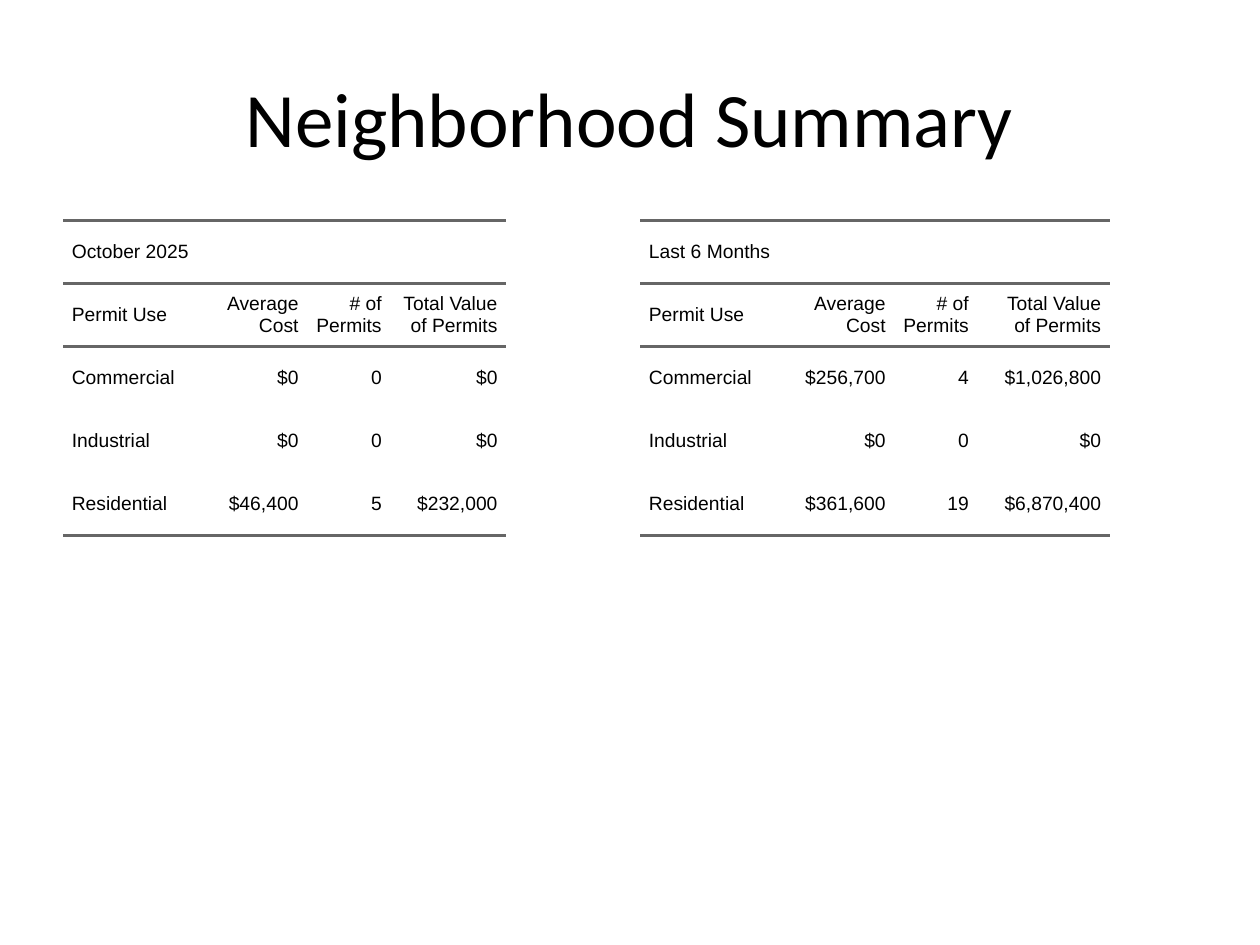
from dataclasses import dataclass
from typing import Any

from lxml import etree
from pptx import Presentation
from pptx.dml.color import RGBColor
from pptx.enum.text import MSO_ANCHOR, PP_ALIGN
from pptx.oxml.ns import qn
from pptx.util import Pt

LEFT, MID, RIGHT = PP_ALIGN.LEFT, PP_ALIGN.CENTER, PP_ALIGN.RIGHT
CENTER = MSO_ANCHOR.MIDDLE
BLACK = RGBColor(0, 0, 0)
GRAY = RGBColor(0x66, 0x66, 0x66)
PLAIN = "{2D5ABB26-0587-4C30-8999-92F81FD0307C}"
SCALE = 9144
TOP, WIDE, HIGH = 175, 442, 495
ROW, PAD = 50, 7
HEADS = ("Permit Use", "Average Cost", "# of Permits", "Total Value of Permits")


@dataclass
class Permits:
    left: int
    name: str
    cols: tuple[int, ...]
    rows: tuple[tuple[str, ...], ...]


TABLES = (
    Permits(50, "October 2025", (110, 84, 66, 92), (
        ("Commercial", "$0", "0", "$0"),
        ("Industrial", "$0", "0", "$0"),
        ("Residential", "$46,400", "5", "$232,000"),
    )),
    Permits(508, "Last 6 Months", (110, 92, 66, 105), (
        ("Commercial", "$256,700", "4", "$1,026,800"),
        ("Industrial", "$0", "0", "$0"),
        ("Residential", "$361,600", "19", "$6,870,400"),
    )),
)


def px(size: int) -> int:
    return size * SCALE


def style(item: Any, values: dict[str, Any]) -> None:
    for key, value in values.items():
        setattr(item, key, value)


def rule(cell: Any, edges: tuple[str, ...]) -> None:
    props = cell._tc.get_or_add_tcPr()
    for spot, edge in enumerate(edges):
        line = etree.Element(qn(f"a:{edge}"), w=str(Pt(1.5)), cmpd="sng")
        fill = etree.SubElement(line, qn("a:solidFill"))
        etree.SubElement(fill, qn("a:srgbClr"), val=str(GRAY))
        etree.SubElement(line, qn("a:prstDash"), val="solid")
        props.insert(spot, line)


def write(cell: Any, text: str, align: Any) -> None:
    cell.text = text
    cell.fill.background()
    style(cell, {
        "vertical_anchor": CENTER,
        "margin_left": 0, "margin_right": 0,
        "margin_top": px(PAD), "margin_bottom": px(PAD),
    })
    para = cell.text_frame.paragraphs[0]
    style(para, {"alignment": align, "space_before": Pt(5), "space_after": Pt(5)})
    props = para._p.get_or_add_pPr()
    for side in ("marL", "marR"):
        props.set(side, str(px(PAD)))
    if text:
        font = para.runs[0].font
        style(font, {"name": "Arial", "size": Pt(11)})
        font.color.rgb = BLACK


def draw(slide: Any, data: Permits) -> None:
    rows = ((data.name, "", "", ""), HEADS, *data.rows)
    place = (px(data.left), px(TOP), px(WIDE), px(HIGH))
    frame = slide.shapes.add_table(len(rows), len(HEADS), *place)
    table = frame.table
    style(table, {"first_row": False, "horz_banding": False})
    table._tbl.tblPr.find(qn("a:tableStyleId")).text = PLAIN
    for col, width in zip(table.columns, data.cols):
        col.width = px(width)
    for i, texts in enumerate(rows):
        table.rows[i].height = px(ROW)
        for j, text in enumerate(texts):
            cell = table.cell(i, j)
            write(cell, text, RIGHT if j else LEFT)
            if i < 2:
                rule(cell, ("lnT", "lnB"))
            elif i == len(rows) - 1:
                rule(cell, ("lnB",))
    table.cell(0, 0).merge(table.cell(0, len(HEADS) - 1))
    style(frame, {"width": px(WIDE), "height": px(HIGH)})


def head(slide: Any, text: str) -> None:
    title = slide.shapes.title
    style(title, {"left": px(50), "top": px(30), "width": px(900), "height": px(125)})
    title.text = text
    title.text_frame.vertical_anchor = CENTER
    para = title.text_frame.paragraphs[0]
    para.alignment = MID
    font = para.runs[0].font
    style(font, {"name": "Calibri", "size": Pt(44)})
    font.color.rgb = BLACK


def main() -> None:
    deck = Presentation()
    style(deck, {"slide_width": px(1000), "slide_height": px(750)})
    slide = deck.slides.add_slide(deck.slide_layouts[5])
    for data in TABLES:
        draw(slide, data)
    head(slide, "Neighborhood Summary")
    deck.save("out.pptx")


if __name__ == "__main__":
    main()
